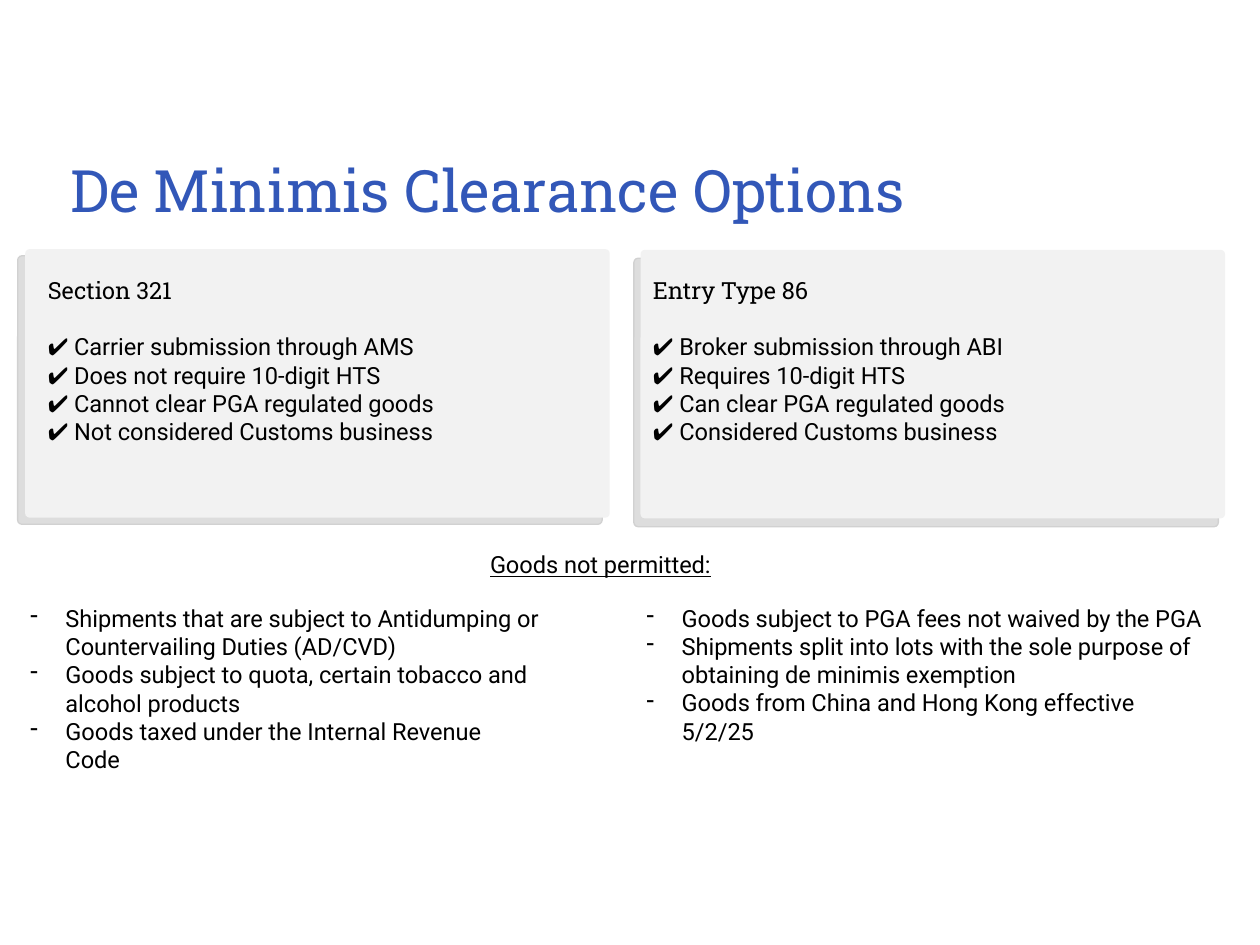
import pptx
import pptx.dml.color
import pptx.enum.shapes
import pptx.enum.text
import pptx.oxml
import pptx.oxml.ns
import pptx.util

Pt = pptx.util.Pt
ALIGN = pptx.enum.text.PP_ALIGN
COLORS = {
    "title": "3257B8",
    "text": "000000",
    "card": "F2F2F2",
    "shade": "747474",
    "edge": "D1D1D1",
}
BODY_SIZE = 13.5
DASH_INDENT = 20.25


def rgb(name):
    return pptx.dml.color.RGBColor.from_string(COLORS[name])


def add_text(slide, box, lines, size=BODY_SIZE, font="Roboto", color="text", margin=None):
    """Add a wrapped text box with one run per line; return its paragraphs."""
    frame = slide.shapes.add_textbox(*[Pt(value) for value in box]).text_frame
    frame.word_wrap = True
    if margin is not None:
        frame.margin_left = frame.margin_right = Pt(margin)
        frame.margin_top = frame.margin_bottom = Pt(margin)
    for index, line in enumerate(lines):
        paragraph = frame.add_paragraph() if index else frame.paragraphs[0]
        run = paragraph.add_run()
        run.text = line
        run.font.size = Pt(size)
        run.font.name = font
        run.font.color.rgb = rgb(color)
    return frame.paragraphs


presentation = pptx.Presentation()
presentation.slide_width, presentation.slide_height = Pt(720), Pt(540)
slide = presentation.slides.add_slide(presentation.slide_layouts[6])

# Cards: translucent backing plates first, then the light fronts
cards = [
    (10.1, 146.2, "shade"),
    (362.2, 147.6, "shade"),
    (14.4, 142.4, "card"),
    (366, 142.8, "card"),
]
for left, top, fill in cards:
    shape = slide.shapes.add_shape(
        pptx.enum.shapes.MSO_SHAPE.ROUNDED_RECTANGLE, Pt(left), Pt(top), Pt(334), Pt(153.4))
    shape.adjustments[0] = 0.016
    shape.shadow.inherit = False
    shape.fill.solid()
    shape.fill.fore_color.rgb = rgb(fill)
    if fill == "shade":
        shape.line.color.rgb = rgb("edge")
        shape.line.width = Pt(0.75)
        color_element = shape.fill._xPr.find(".//" + pptx.oxml.ns.qn("a:srgbClr"))
        alpha = pptx.oxml.parse_xml(
            '<a:alpha %s val="24000"/>' % pptx.oxml.ns.nsdecls("a"))
        color_element.append(alpha)
    else:
        shape.line.fill.background()

# Title
title = add_text(slide, (40.3, 86.4, 640, 41.6), ["De Minimis Clearance Options"],
                 33.4, "Roboto Slab", "title", 0)
title[0].line_spacing = Pt(41.6)

# Clearance options on the cards
options = [
    ((20.2, 154.1, 290, 285), "Section 321", [
        "Carrier submission through AMS",
        "Does not require 10-digit HTS",
        "Cannot clear PGA regulated goods",
        "Not considered Customs business",
    ]),
    ((366, 154.1, 326, 105), "Entry Type 86", [
        "Broker submission through ABI",
        "Requires 10-digit HTS",
        "Can clear PGA regulated goods",
        "Considered Customs business",
    ]),
]
for box, heading, features in options:
    paragraphs = add_text(slide, box, [heading] + ["✔ " + feature for feature in features])
    paragraphs[0].runs[0].font.name = "Roboto Slab"
    paragraphs[0].space_after = Pt(16)

# Goods not permitted: two dashed lists
restrictions = [
    ((362.2, 341.3, 334, 105), [
        "Goods subject to PGA fees not waived by the PGA",
        "Shipments split into lots with the sole purpose of obtaining de minimis exemption",
        "Goods from China and Hong Kong effective 5/2/25",
    ]),
    ((10.1, 341.3, 306, 121.7), [
        "Shipments that are subject to Antidumping or Countervailing Duties (AD/CVD)",
        "Goods subject to quota, certain tobacco and alcohol products",
        "Goods taxed under the Internal Revenue Code",
    ]),
]
for box, goods in restrictions:
    for paragraph in add_text(slide, box, goods):
        properties = paragraph._p.get_or_add_pPr()
        properties.set("marL", str(Pt(DASH_INDENT)))
        properties.set("indent", str(-Pt(DASH_INDENT)))
        properties.append(pptx.oxml.parse_xml(
            '<a:buChar %s char="-"/>' % pptx.oxml.ns.nsdecls("a")))

# Heading above the lists
heading = add_text(slide, (190.1, 311, 306, 23.8), ["Goods not permitted:"])[0]
heading.alignment = ALIGN.CENTER
heading.runs[0].font.underline = True

presentation.save("out.pptx")
